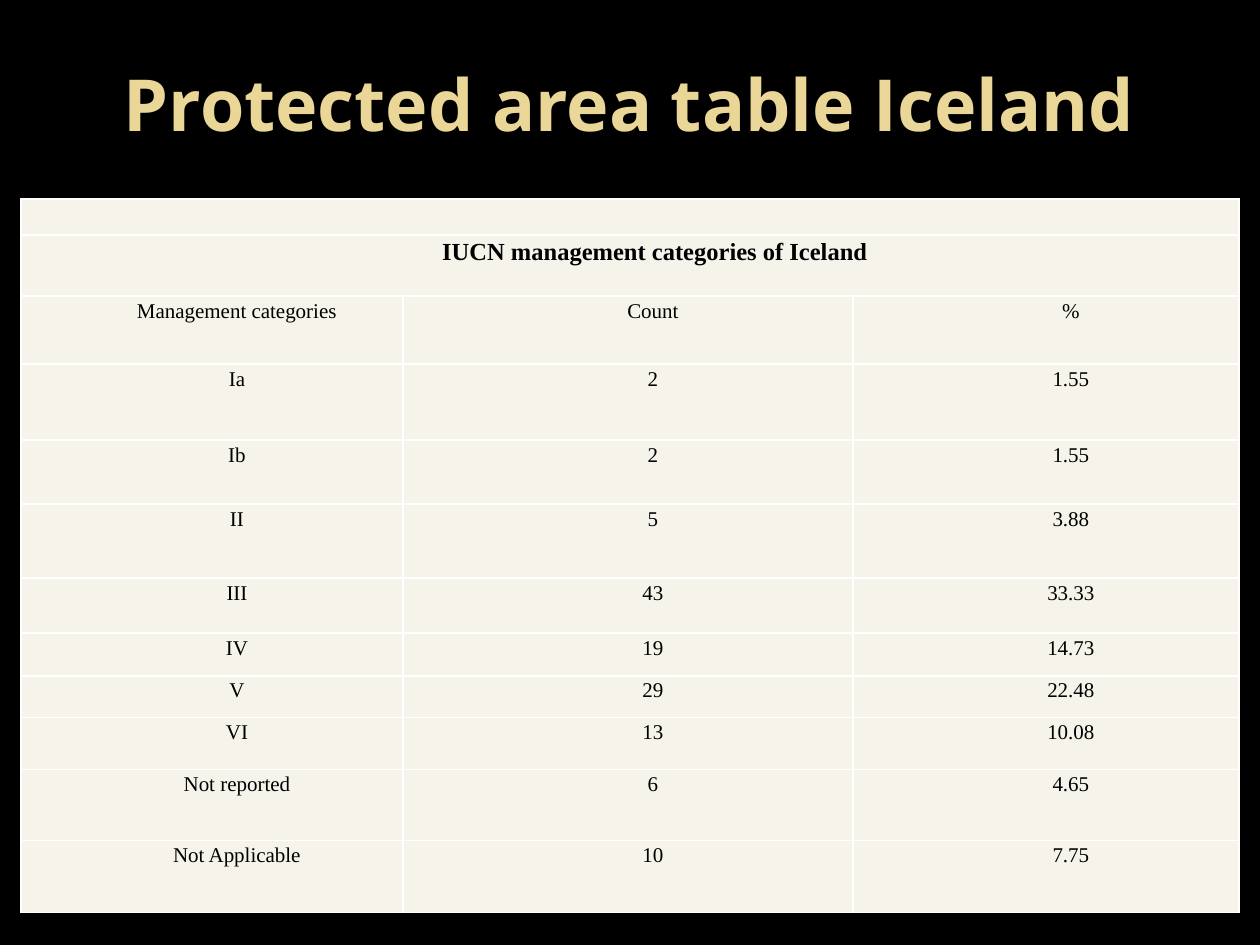
from pptx import Presentation
from pptx.dml.color import RGBColor
from pptx.enum.text import MSO_ANCHOR as ANCHOR, PP_ALIGN as ALIGN
from pptx.oxml.ns import qn
from pptx.util import Emu, Pt
from lxml.etree import SubElement, Element

EMU_PER_PX = 914400 / 126


def px(n):
    return Emu(round(n * EMU_PER_PX))


def rgb(value):
    return RGBColor.from_string(value)


def write(tf, text, *, size, font, color, bold=False, indent=0,
          spacing=None, after=None):
    """Put one centred, formatted paragraph into a text frame."""
    p = tf.paragraphs[0]
    p.alignment = ALIGN.CENTER
    p.line_spacing = spacing
    if after is not None:
        p.space_after = Pt(after)
    if indent:
        p._p.get_or_add_pPr().set("marL", str(px(indent)))
    r = p.add_run()
    r.text = text
    r.font.size, r.font.name, r.font.bold = Pt(size), font, bold
    r.font.color.rgb = rgb(color)


class SlideBuilder:
    TITLE = dict(size=41, font="Open Sans", color="EAD696", bold=True)
    BODY = dict(size=12, font="Times New Roman", color="000000",
                indent=50, spacing=1.15, after=10)
    HEADING = {**BODY, "size": 14, "bold": True}
    BACKGROUND, CELL, RULE = "000000", "F6F3EA", "FFFFFF"

    def __init__(self, prs):
        self.s = prs.slides.add_slide(prs.slide_layouts[6])
        fill = self.s.background.fill
        fill.solid()
        fill.fore_color.rgb = rgb(self.BACKGROUND)

    def title(self, text, x, y, w, h):
        tf = self.s.shapes.add_textbox(px(x), px(y), px(w), px(h)).text_frame
        tf.word_wrap = True
        tf.vertical_anchor = ANCHOR.MIDDLE
        write(tf, text, **self.TITLE)

    def table(self, x, y, widths, heights):
        sp = self.s.shapes.add_table(len(heights), len(widths), px(x), px(y),
                                     px(sum(widths)), px(sum(heights)))
        table = sp.table
        table.first_row = table.horz_banding = False
        for column, w in zip(table.columns, widths):
            column.width = px(w)
        for row, h in zip(table.rows, heights):
            row.height = px(h)
        for cell in table.iter_cells():
            self.style_cell(cell)
        return table

    def style_cell(self, cell):
        cell.margin_left = cell.margin_right = px(9)
        cell.margin_top = cell.margin_bottom = 0
        cell.fill.solid()
        cell.fill.fore_color.rgb = rgb(self.CELL)
        # Borders come before the fill in the cell properties
        tc_pr = cell._tc.get_or_add_tcPr()
        for i, side in enumerate(("a:lnL", "a:lnR", "a:lnT", "a:lnB")):
            line = Element(qn(side), w=str(Pt(1)))
            solid = SubElement(line, qn("a:solidFill"))
            SubElement(solid, qn("a:srgbClr"), val=self.RULE)
            tc_pr.insert(i, line)

    def merge_row(self, table, row):
        table.cell(row, 0).merge(table.cell(row, len(table.columns) - 1))

    def shrink_empty(self, cell):
        """Keep an empty cell from growing past its row height."""
        p = cell.text_frame.paragraphs[0]
        SubElement(p._p, qn("a:endParaRPr"), sz="1200")


ROWS = [
    ("Management categories", "Count", "%"),
    ("Ia", "2", "1.55"),
    ("Ib", "2", "1.55"),
    ("II", "5", "3.88"),
    ("III", "43", "33.33"),
    ("IV", "19", "14.73"),
    ("V", "29", "22.48"),
    ("VI", "13", "10.08"),
    ("Not reported", "6", "4.65"),
    ("Not Applicable", "10", "7.75"),
]
WIDTHS = [382, 450, 386]
HEIGHTS = [36, 61, 68, 76, 64, 74, 55, 43, 42, 52, 71, 72]


def main():
    prs = Presentation()
    prs.slide_width, prs.slide_height = px(1260), px(945)
    slide = SlideBuilder(prs)

    # Title
    slide.title("Protected area table Iceland", 63, 38, 1134, 130)

    # Table with an empty row and a heading row across all columns
    table = slide.table(21, 199, WIDTHS, HEIGHTS)
    for cell in table.rows[0].cells:
        slide.shrink_empty(cell)
    for row in (0, 1):
        slide.merge_row(table, row)
    write(table.cell(1, 0).text_frame, "IUCN management categories of Iceland",
          **slide.HEADING)

    # Category rows
    for i, values in enumerate(ROWS, start=2):
        for j, text in enumerate(values):
            write(table.cell(i, j).text_frame, text, **slide.BODY)

    prs.save("out.pptx")


if __name__ == "__main__":
    main()
